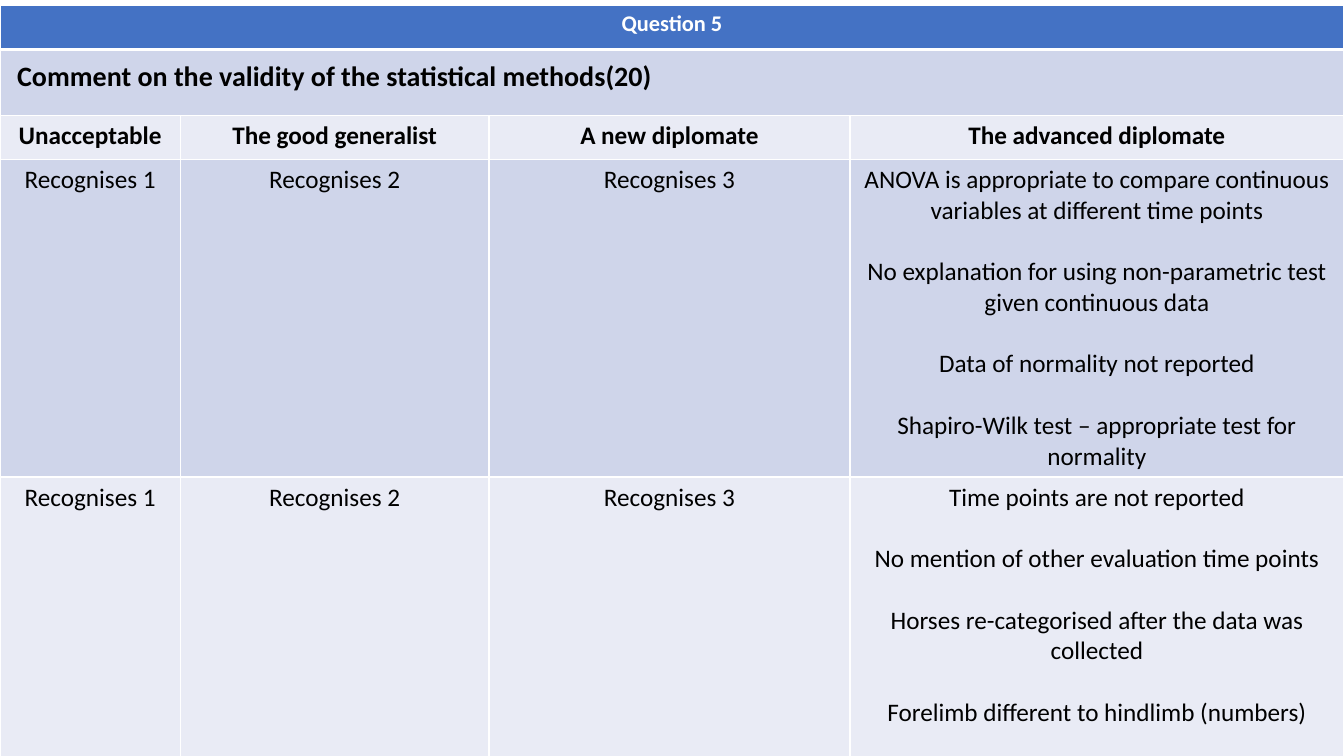
from lxml.etree import SubElement as Sub
from pptx import Presentation
from pptx.dml.color import RGBColor as RGB
from pptx.enum.text import PP_ALIGN as Align
from pptx.oxml.ns import qn
from pptx.util import Inches, Pt

BLUE = RGB(0x44, 0x72, 0xC4)
DARK = RGB(0xCF, 0xD5, 0xEA)
LIGHT = RGB(0xE9, 0xEB, 0xF5)
WHITE = RGB(0xFF, 0xFF, 0xFF)
BLACK = RGB(0, 0, 0)

WIDTHS = [1.79, 3.06, 3.58, 4.9]
HEIGHTS = [0.44, 0.66, 0.43, 3.15, 2.77]
FILLS = [BLUE, DARK, LIGHT, DARK, LIGHT]
GAP = Pt(22)

TITLE = "Question 5"
TASK = "Comment on the validity of the statistical methods(20)"
GRADES = ["Unacceptable", "The good generalist", "A new diplomate",
          "The advanced diplomate"]
LEVELS = ["Recognises 1", "Recognises 2", "Recognises 3"]
TESTS = [
    "ANOVA is appropriate to compare continuous variables at different time points",
    "No explanation for using non-parametric test given continuous data",
    "Data of normality not reported",
    "Shapiro-Wilk test – appropriate test for normality",
]
TIMES = [
    "Time points are not reported",
    "No mention of other evaluation time points",
    "Horses re-categorised after the data was collected",
    "Forelimb different to hindlimb (numbers)",
]


def add_grid(slide):
    frame = slide.shapes.add_table(
        len(HEIGHTS), len(WIDTHS), Inches(0), Inches(0.05),
        Inches(sum(WIDTHS)), Inches(sum(HEIGHTS)))
    grid = frame.table
    for col, width in zip(grid.columns, WIDTHS):
        col.width = Inches(width)
    for row, height in zip(grid.rows, HEIGHTS):
        row.height = Inches(height)
    return grid


def add_edge(cell, side, width):
    props = cell._tc.get_or_add_tcPr()
    line = Sub(props, qn(f"a:ln{side}"), w=str(Pt(width)))
    fill = Sub(line, qn("a:solidFill"))
    Sub(fill, qn("a:srgbClr"), val=str(WHITE))


def style_cells(grid):
    for num, (row, fill) in enumerate(zip(grid.rows, FILLS)):
        for cell in row.cells:
            add_edge(cell, "L", 1)
            add_edge(cell, "R", 1)
            add_edge(cell, "T", 3 if num == 1 else 1)
            add_edge(cell, "B", 3 if num == 0 else 1)
            cell.fill.solid()
            cell.fill.fore_color.rgb = fill


def write(cell, lines, size=18, bold=False, color=BLACK, align=Align.CENTER):
    frame = cell.text_frame
    frame.text = "\n".join(lines)
    for num, para in enumerate(frame.paragraphs):
        para.alignment = align
        if num:
            para.space_before = GAP
        for run in para.runs:
            font = run.font
            font.name = "Calibri"
            font.size = Pt(size)
            font.bold = bold
            font.color.rgb = color


def write_row(grid, row, texts, bold=False):
    for col, lines in enumerate(texts):
        write(grid.cell(row, col), lines, bold=bold)


def write_wide(grid, row, text, **style):
    cell = grid.cell(row, 0)
    cell.merge(grid.cell(row, len(WIDTHS) - 1))
    write(cell, [text], bold=True, **style)
    return cell


def main():
    deck = Presentation()
    deck.slide_width = Inches(13.33)
    deck.slide_height = Inches(7.5)
    slide = deck.slides.add_slide(deck.slide_layouts[6])
    grid = add_grid(slide)
    style_cells(grid)
    write_wide(grid, 0, TITLE, size=16, color=WHITE)
    task = write_wide(grid, 1, TASK, size=20, align=Align.LEFT)
    task.margin_left = Inches(0.17)
    task.margin_top = Inches(0.1)
    write_row(grid, 2, [[grade] for grade in GRADES], bold=True)
    for row, points in enumerate([TESTS, TIMES], 3):
        write_row(grid, row, [[level] for level in LEVELS] + [points])
    deck.save("out.pptx")


if __name__ == "__main__":
    main()
